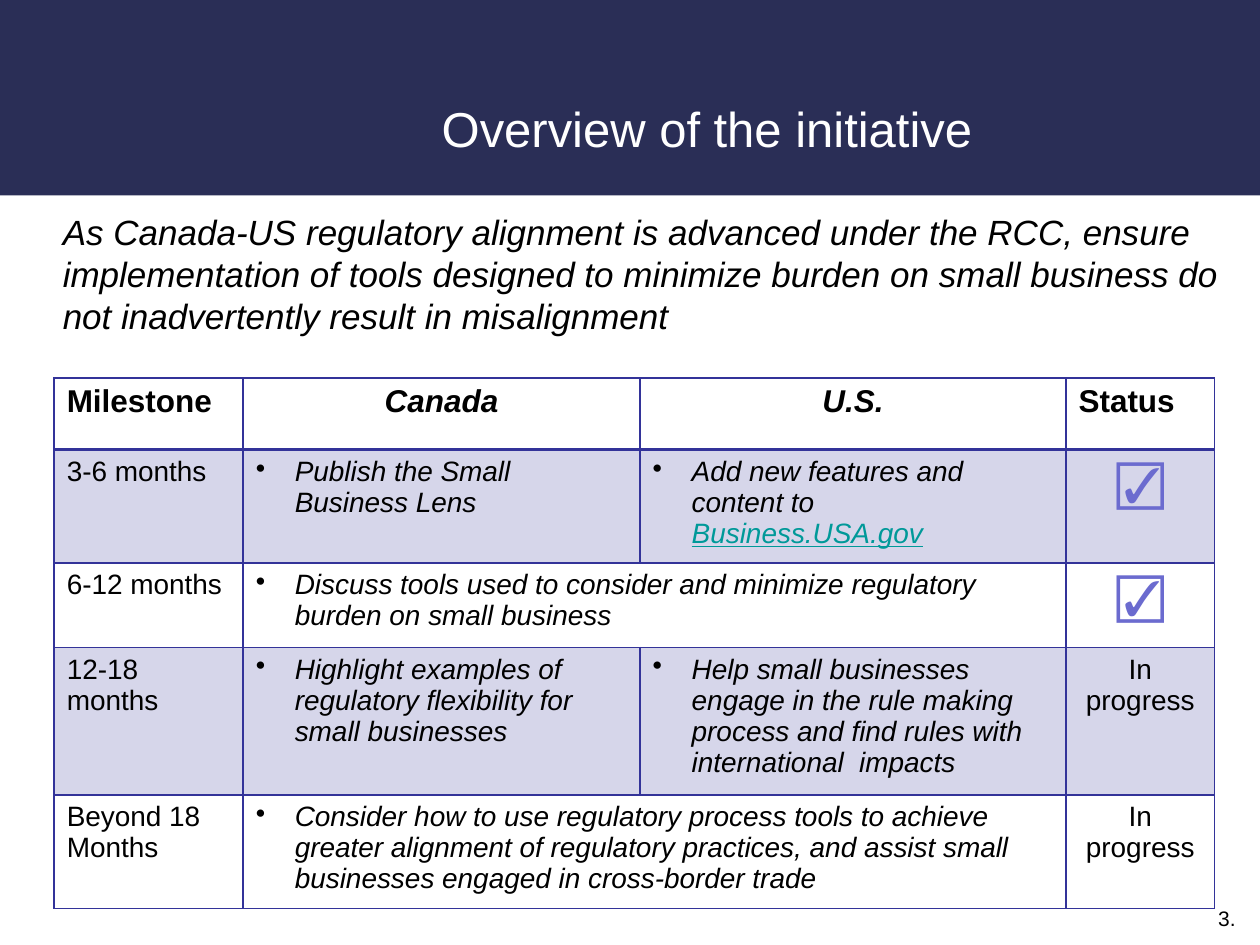
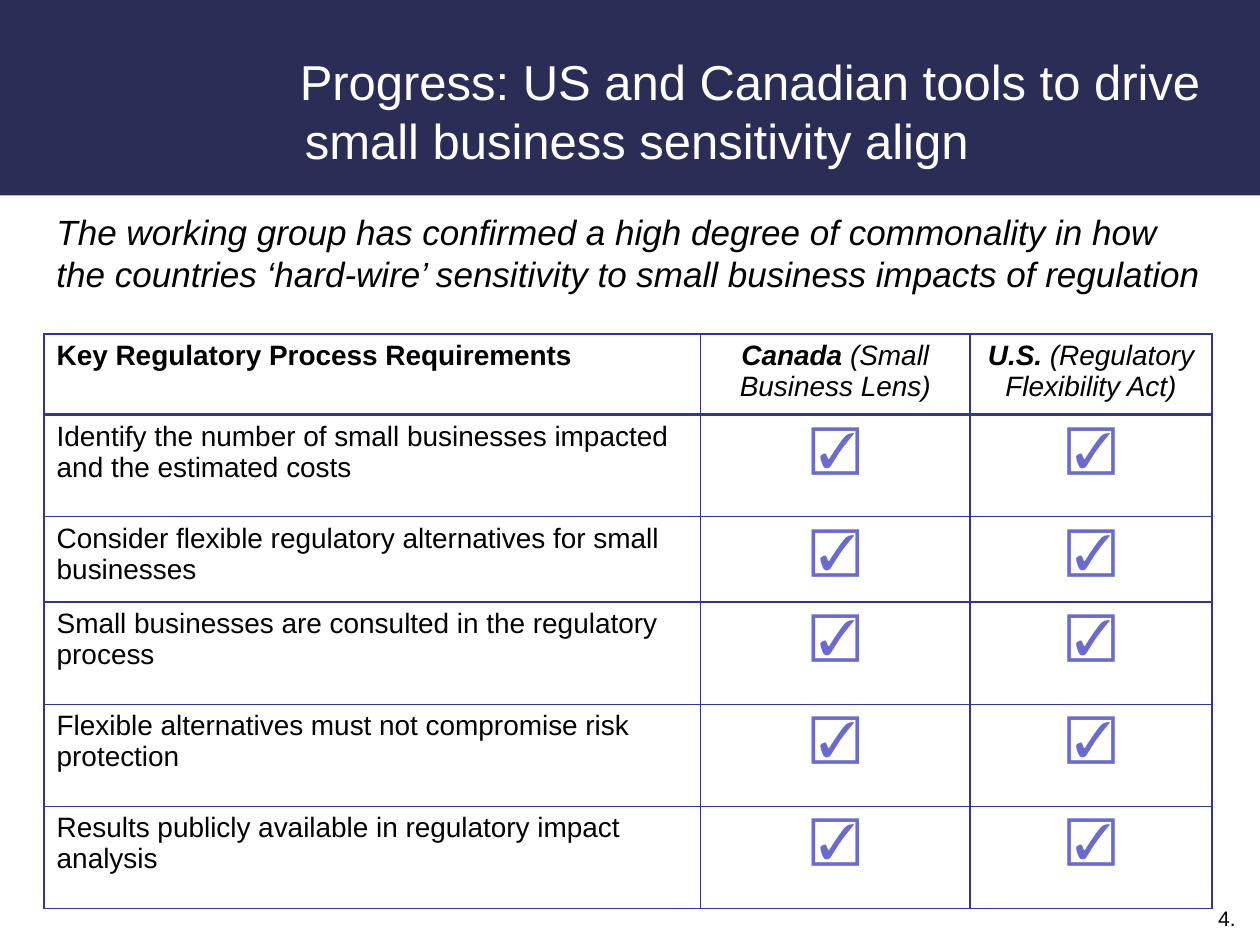
from lxml.etree import SubElement
from pptx import Presentation
from pptx.dml.color import RGBColor
from pptx.enum.shapes import MSO_SHAPE
from pptx.enum.text import MSO_ANCHOR, PP_ALIGN
from pptx.oxml.ns import qn
from pptx.util import Inches, Pt

FONT = "Arial"
COLORS = {
    "band": "2A2E56",
    "title": "FFFFFF",
    "text": "000000",
    "grid": "333399",
    "link": "009999",
    "check": "6B6BCF",
}
CHECK = ("center", ("☑", "check"))
IN_PROGRESS = ("center", ("In progress", ""))


def rgb(name):
    return RGBColor.from_string(COLORS[name])


def style_run(r, size, color="text", bold=False, italic=False):
    r.font.name = FONT
    r.font.size = Pt(size)
    r.font.bold = bold
    r.font.italic = italic
    r.font.color.rgb = rgb(color)


def set_indent(p, hang):
    pPr = p._p.get_or_add_pPr()
    pPr.set("marL", str(Inches(hang)))
    pPr.set("indent", str(Inches(-hang)))
    return pPr


def add_text(s, box, text, size, color="text", italic=False):
    tf = s.shapes.add_textbox(*map(Inches, box)).text_frame
    tf.word_wrap = True
    tf.text = text
    style_run(tf.paragraphs[0].runs[0], size, color, italic=italic)
    return tf


# Parts shared by the slides
def add_frame(s, title, title_box, number, align):
    band = s.shapes.add_shape(MSO_SHAPE.RECTANGLE, 0, 0, Inches(10), Inches(1.55))
    band.shadow.inherit = False
    band.fill.solid()
    band.fill.fore_color.rgb = rgb("band")
    band.line.fill.background()

    add_text(s, (9.57, 7.14, 0.47, 0.3), f"{number}.", 12)

    tf = add_text(s, title_box, title, 28, "title")
    tf.vertical_anchor = MSO_ANCHOR.MIDDLE
    tf.margin_left = tf.margin_top = tf.margin_bottom = Inches(0.06)
    p = tf.paragraphs[0]
    p.alignment = align
    set_indent(p, 0.04)


# Table cells
def add_border(cell, side, width):
    ln = SubElement(cell._tc.get_or_add_tcPr(), qn(f"a:ln{side}"), w=str(Pt(width)))
    fill = SubElement(ln, qn("a:solidFill"))
    SubElement(fill, qn("a:srgbClr"), val=COLORS["grid"])


def paint_cell(cell, row, shaded):
    for side in "LRTB":
        under_header = (row, side) in ((0, "B"), (1, "T"))
        add_border(cell, side, 2 if under_header else 1)
    if shaded:
        cell.fill.solid()
        cell.fill.fore_color.rgb = rgb("grid")
        tint = cell._tc.tcPr.find(f"{qn('a:solidFill')}/{qn('a:srgbClr')}")
        SubElement(tint, qn("a:alpha"), val="20000")
    else:
        cell.fill.background()


def fill_cell(cell, layout, runs, size):
    p = cell.text_frame.paragraphs[0]
    if layout == "center":
        p.alignment = PP_ALIGN.CENTER
    elif layout == "bullet":
        SubElement(set_indent(p, 0.31), qn("a:buChar"), char="•")
    for text, style in runs:
        r = p.add_run()
        r.text = text
        if style == "check":
            style_run(r, 28, "check")
        elif style == "link":
            style_run(r, size, "link", italic=True)
            r.font.underline = True
        else:
            style_run(r, size, bold="b" in style, italic="i" in style)


def add_grid(s, left, top, widths, heights, rows, head_size=16, shaded_rows=()):
    """Each cell is (layout, run, ...); None extends the cell to its left."""
    frame = s.shapes.add_table(len(heights), len(widths), Inches(left), Inches(top),
                               Inches(sum(widths)), Inches(sum(heights)))
    table = frame.table
    table.first_row = table.horz_banding = False
    for column, width in zip(table.columns, widths):
        column.width = Inches(width)
    for i, (height, row) in enumerate(zip(heights, rows)):
        table.rows[i].height = Inches(height)
        for j, content in enumerate(row):
            cell = table.cell(i, j)
            paint_cell(cell, i, i in shaded_rows)
            if content is None:
                table.cell(i, j - 1).merge(cell)
            else:
                layout, *runs = content
                fill_cell(cell, layout, runs, head_size if i == 0 else 16)


def left(text, style=""):
    return "left", (text, style)


def bullet(text, *more):
    return "bullet", (text, "i"), *more


# Slide: milestones by country
def build_overview(s):
    add_frame(s, "Overview of the initiative", (1.93, 0.52, 7.4, 0.99), 3,
              PP_ALIGN.CENTER)
    tf = add_text(
        s, (0.4, 1.62, 9.4, 1.11),
        "As Canada-US regulatory alignment is advanced under the RCC, ensure "
        "implementation of tools designed to minimize burden on small business do "
        "not inadvertently result in misalignment", 20, italic=True)
    tf.paragraphs[0].space_after = Pt(6)
    rows = [
        [left("Milestone", "b"), ("center", ("Canada", "bi")),
         ("center", ("U.S.", "bi")), left("Status", "b")],
        [left("3-6 months"), bullet("Publish the Small Business Lens"),
         bullet("Add new features and content to ", ("Business.USA.gov", "link")),
         CHECK],
        [left("6-12 months"),
         bullet("Discuss tools used to consider and minimize regulatory burden on "
                "small business"), None, CHECK],
        [left("12-18 months"),
         bullet("Highlight examples of regulatory flexibility for small businesses"),
         bullet("Help small businesses engage in the rule making process and find "
                "rules with international  impacts"), IN_PROGRESS],
        [left("Beyond 18 Months"),
         bullet("Consider how to use regulatory process tools to achieve greater "
                "alignment of regulatory practices, and assist small businesses "
                "engaged in cross-border trade"), None, IN_PROGRESS],
    ]
    add_grid(s, 0.43, 3, [1.5, 3.15, 3.38, 1.18], [0.57, 0.9, 0.67, 1.17, 0.9],
             rows, head_size=18, shaded_rows=(1, 3))


# Slide: requirements met by both countries
def build_progress(s):
    add_frame(s, "Progress: US and Canadian tools to drive small business "
              "sensitivity align", (2.32, 0.21, 7.4, 1.34), 4, PP_ALIGN.LEFT)
    requirements = [
        "Identify the number of small businesses impacted and the estimated costs",
        "Consider flexible regulatory alternatives for small businesses",
        "Small businesses are consulted in the regulatory process",
        "Flexible alternatives must not compromise risk protection",
        "Results publicly available in regulatory impact analysis",
    ]
    header = [
        left("Key Regulatory Process Requirements", "b"),
        ("center", ("Canada ", "bi"), ("(Small Business Lens)", "i")),
        ("center", ("U.S. ", "bi"), ("(Regulatory Flexibility Act)", "i")),
    ]
    rows = [header] + [[left(text), CHECK, CHECK] for text in requirements]
    add_grid(s, 0.35, 2.65, [5.21, 2.14, 1.92],
             [0.64, 0.81, 0.68, 0.81, 0.81, 0.81], rows)
    add_text(
        s, (0.35, 1.62, 9.37, 0.77),
        "The working group has confirmed a high degree of commonality in how the "
        "countries ‘hard-wire’ sensitivity to small business impacts of regulation",
        20, italic=True)


def main():
    prs = Presentation()
    prs.slide_width, prs.slide_height = Inches(10), Inches(7.5)
    for build in (build_overview, build_progress):
        build(prs.slides.add_slide(prs.slide_layouts[6]))
    prs.save("out.pptx")


if __name__ == "__main__":
    main()
